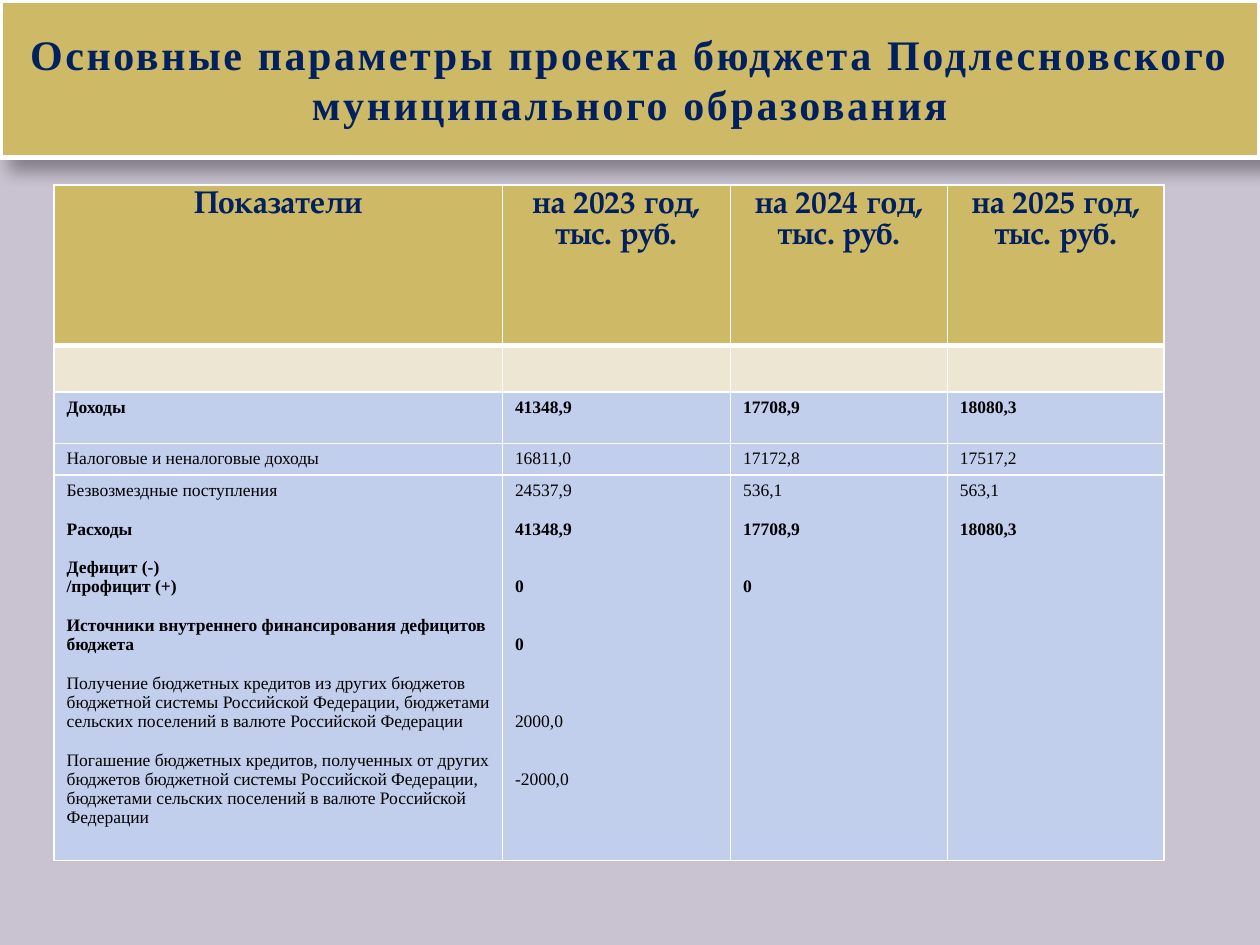
"""Build a slide with the main budget parameters of a municipality."""
from lxml.etree import SubElement
from pptx import Presentation
from pptx.dml.color import RGBColor
from pptx.enum.shapes import MSO_SHAPE
from pptx.enum.text import MSO_ANCHOR, PP_ALIGN
from pptx.oxml import parse_xml
from pptx.oxml.ns import nsdecls, qn
from pptx.util import Cm, Pt

TITLE = "Основные параметры проекта бюджета Подлесновского муниципального образования"
HEADERS = ["Показатели", "на 2023 год, тыс. руб.", "на 2024 год, тыс. руб.", "на 2025 год, тыс. руб."]
INCOME = ["Доходы", "41348,9", "17708,9", "18080,3"]
TAXES = ["Налоговые и неналоговые доходы", "16811,0", "17172,8", "17517,2"]
# Each entry: text, bold, empty lines above
DETAILS = [
    [
        ("Безвозмездные поступления", False, 0),
        ("Расходы", True, 1),
        ("Дефицит (-)", True, 1),
        ("/профицит (+)", True, 0),
        ("Источники внутреннего финансирования дефицитов бюджета", True, 1),
        ("Получение бюджетных кредитов из других бюджетов бюджетной системы Российской "
         "Федерации, бюджетами сельских поселений в валюте Российской Федерации", False, 1),
        ("Погашение бюджетных кредитов, полученных от других бюджетов бюджетной системы Российской "
         "Федерации, бюджетами сельских поселений в валюте Российской Федерации", False, 1),
    ],
    [("24537,9", False, 0), ("41348,9", True, 1), ("0", True, 2), ("0", True, 2),
     ("2000,0", False, 3), ("-2000,0", False, 2)],
    [("536,1", False, 0), ("17708,9", True, 1), ("0", True, 2)],
    [("563,1", False, 0), ("18080,3", True, 1)],
]
ROWS = [
    [[(text, True, 0)] for text in HEADERS],
    [[] for _ in HEADERS],
    [[(text, True, 0)] for text in INCOME],
    [[(text, False, 0)] for text in TAXES],
    DETAILS,
]
ROW_FILLS = ["CEB966", "EDE6D3", "C1CEEC", "C1CEEC", "C1CEEC"]
ROW_HEIGHTS = [3.23, 0.94, 1.04, 0.64, 7.77]
COLUMN_WIDTHS = [9.04, 4.6, 4.37, 4.37]
HEADER_STYLE = {"size": 18, "name": "TeX Gyre Pagella", "color": "002060"}
BODY_STYLE = {"size": 10, "name": "Times New Roman", "color": "000000"}
TITLE_STYLE = {"size": 24, "name": "Times New Roman", "color": "002060"}


def paint(fill, color):
    fill.solid()
    fill.fore_color.rgb = RGBColor.from_string(color)


def format_runs(paragraph, size, name, color, bold):
    for run in paragraph.runs:
        run.font.size = Pt(size)
        run.font.name = name
        run.font.bold = bold
        run.font.color.rgb = RGBColor.from_string(color)


def add_title(slide):
    shape = slide.shapes.add_shape(MSO_SHAPE.RECTANGLE, 0, 0, Cm(25.4), Cm(3.18))
    paint(shape.fill, "CEB966")
    paint(shape.line.fill, "FFFFFF")
    shape.line.width = Pt(3)
    shape.shadow.inherit = False
    effects = shape.element.spPr.find(qn("a:effectLst"))
    effects.append(parse_xml(
        f'<a:outerShdw {nsdecls("a")} blurRad="{Pt(10.2)}" dist="{Pt(8)}" dir="2700000" '
        'algn="tl" rotWithShape="0"><a:srgbClr val="000000"><a:alpha val="35000"/>'
        '</a:srgbClr></a:outerShdw>'))
    shape.text_frame.text = TITLE
    shape.text_frame.word_wrap = True
    shape.text_frame.vertical_anchor = MSO_ANCHOR.MIDDLE
    paragraph = shape.text_frame.paragraphs[0]
    paragraph.alignment = PP_ALIGN.CENTER
    format_runs(paragraph, bold=True, **TITLE_STYLE)
    paragraph.runs[0].font._element.set("spc", "150")


def add_borders(cell, widths):
    properties = cell._tc.get_or_add_tcPr()
    for side, width in widths.items():
        line = SubElement(properties, qn(f"a:ln{side}"), w=str(Pt(width)))
        solid = SubElement(line, qn("a:solidFill"))
        SubElement(solid, qn("a:srgbClr"), val="FFFFFF")


def fill_cell(cell, entries, style, line_height, alignment):
    for index, (text, bold, empty_lines) in enumerate(entries):
        frame = cell.text_frame
        paragraph = frame.add_paragraph() if index else frame.paragraphs[0]
        paragraph.text = text
        paragraph.alignment = alignment
        paragraph.line_spacing = Pt(line_height)
        paragraph.space_before = Pt(empty_lines * line_height)
        format_runs(paragraph, bold=bold, **style)


def add_budget_table(slide):
    table = slide.shapes.add_table(
        len(ROWS), len(HEADERS), Cm(1.09), Cm(3.73),
        Cm(sum(COLUMN_WIDTHS)), Cm(sum(ROW_HEIGHTS))).table
    for column, width in zip(table.columns, COLUMN_WIDTHS):
        column.width = Cm(width)
    for row_index, (row, height, color) in enumerate(zip(ROWS, ROW_HEIGHTS, ROW_FILLS)):
        table.rows[row_index].height = Cm(height)
        is_header = row_index == 0
        for column_index, entries in enumerate(row):
            cell = table.cell(row_index, column_index)
            cell.margin_top = cell.margin_bottom = Cm(0.12 if entries else 0)
            add_borders(cell, {"L": 1, "R": 1, "T": 3 if row_index == 1 else 1, "B": 3 if is_header else 1})
            paint(cell.fill, color)
            if is_header:
                fill_cell(cell, entries, HEADER_STYLE, 17.7, PP_ALIGN.CENTER)
            else:
                fill_cell(cell, entries, BODY_STYLE, 11, PP_ALIGN.LEFT)


def main():
    presentation = Presentation()
    presentation.slide_width, presentation.slide_height = Cm(25.4), Cm(19.05)
    slide = presentation.slides.add_slide(presentation.slide_layouts[6])
    paint(slide.background.fill, "C9C2D1")
    add_title(slide)
    add_budget_table(slide)
    presentation.save("out.pptx")


if __name__ == "__main__":
    main()
